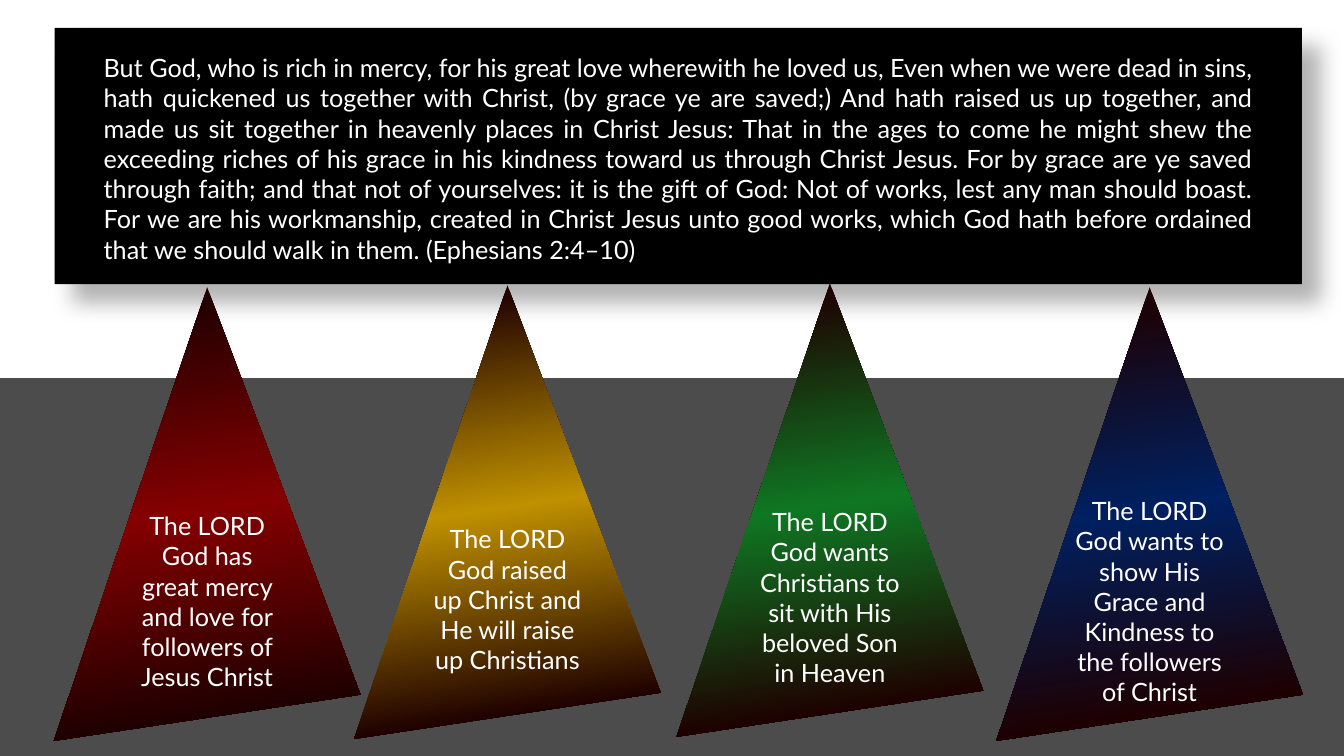
from lxml.etree import SubElement
from pptx import Presentation
from pptx.dml.color import RGBColor
from pptx.enum.shapes import MSO_SHAPE
from pptx.enum.text import MSO_ANCHOR, MSO_AUTO_SIZE, PP_ALIGN
from pptx.oxml.ns import qn
from pptx.util import Pt

VERSE = (
    "But God, who is rich in mercy, for his great love wherewith he loved us, "
    "Even when we were dead in sins, hath quickened us together with Christ, "
    "(by grace ye are saved;) And hath raised us up together, and made us sit "
    "together in heavenly places in Christ Jesus: That in the ages to come he "
    "might shew the exceeding riches of his grace in his kindness toward us "
    "through Christ Jesus. For by grace are ye saved through faith; and that "
    "not of yourselves: it is the gift of God: Not of works, lest any man "
    "should boast. For we are his workmanship, created in Christ Jesus unto "
    "good works, which God hath before ordained that we should walk in them. "
    "(Ephesians 2:4–10)"
)

# Apex x, apex y, glow colour, text
PEAKS = [
    (592.8, 202.3, "0F7723", "The LORD God wants Christians to sit with His beloved Son in Heaven"),
    (148, 205.2, "850001", "The LORD God has great mercy and love for followers of Jesus Christ"),
    (362.5, 203.8, "BF9000", "The LORD God raised up Christ and He will raise up Christians"),
    (821.2, 205.2, "002060", "The LORD God wants to show His Grace and Kindness "
                             "to the followers of Christ"),
]


def color(code):
    return RGBColor.from_string(code)


def node(parent, tag, **attrs):
    return SubElement(parent, qn(tag), {k: str(v) for k, v in attrs.items()})


def write(frame, text, align=PP_ALIGN.LEFT, size=18, font="Lato", ink="FFFFFF"):
    frame.word_wrap = True
    para = frame.paragraphs[0]
    para.alignment = align
    run = para.add_run()
    run.text = text
    run.font.size = Pt(size)
    run.font.name = font
    run.font.color.rgb = color(ink)


class Deck:
    dark = "1E0000"
    half, left, right = 109.5, 324, 291  # slanted triangle, measured from its apex

    def __init__(self):
        self.file = Presentation()
        self.file.slide_width = Pt(960)
        self.file.slide_height = Pt(540)
        self.slide = self.file.slides.add_slide(self.file.slide_layouts[6])

    def rect(self, x, y, w, h, fill, alpha=None):
        box = self.slide.shapes.add_shape(MSO_SHAPE.RECTANGLE, Pt(x), Pt(y), Pt(w), Pt(h))
        box.shadow.inherit = False
        box.fill.solid()
        box.fill.fore_color.rgb = color(fill)
        box.line.fill.background()
        if alpha:
            tone = box.fill._xPr.find(qn("a:solidFill"))[0]
            node(tone, "a:alpha", val=alpha * 1000)
        return box

    def shade(self, box, blur, dist, angle, alpha):
        list_ = box._element.spPr.find(qn("a:effectLst"))
        cast = node(list_, "a:outerShdw", blurRad=Pt(blur), dist=Pt(dist),
                    dir=angle * 60000, algn="tl", rotWithShape=0)
        tone = node(cast, "a:srgbClr", val="000000")
        node(tone, "a:alpha", val=alpha * 1000)

    def peak(self, x, y, glow, text):
        pen = self.slide.shapes.build_freeform(Pt(x), Pt(y))
        pen.add_line_segments([
            (Pt(x + self.half), Pt(y + self.right)),
            (Pt(x - self.half), Pt(y + self.left)),
        ], close=True)
        cone = pen.convert_to_shape()
        cone.shadow.inherit = False
        cone.line.fill.background()
        # Gradient bands run parallel to the slanted base
        cone.fill.gradient()
        cone.fill.gradient_angle = 278.6
        stops = cone.fill._xPr.find(qn("a:gradFill")).find(qn("a:gsLst"))
        for old in list(stops):
            stops.remove(old)
        for place, tone in ((5, self.dark), (49, glow), (91, self.dark)):
            stop = node(stops, "a:gs", pos=place * 1000)
            node(stop, "a:srgbClr", val=tone)
        # Keep the words in the lower middle
        frame = cone.text_frame
        frame.margin_left = frame.margin_right = Pt(56)
        frame.margin_top, frame.margin_bottom = Pt(126), Pt(1.5)
        frame.vertical_anchor = MSO_ANCHOR.MIDDLE
        write(frame, text, align=PP_ALIGN.CENTER)

    def note(self, x, y, w, h, text, **style):
        frame = self.slide.shapes.add_textbox(Pt(x), Pt(y), Pt(w), Pt(h)).text_frame
        write(frame, text, **style)
        frame.auto_size = MSO_AUTO_SIZE.SHAPE_TO_FIT_TEXT


def main():
    deck = Deck()
    # Floor
    deck.rect(0, 270, 960, 270, "000000", alpha=70)
    # Verse panel
    panel = deck.rect(39, 20, 891, 183, "000000")
    deck.shade(panel, blur=15, dist=18, angle=45, alpha=30)
    # Four lessons
    for peak in PEAKS:
        deck.peak(*peak)
    # Verse
    deck.note(67, 34, 835, 160, VERSE, align=PP_ALIGN.JUSTIFY)
    deck.file.save("out.pptx")


if __name__ == "__main__":
    main()
